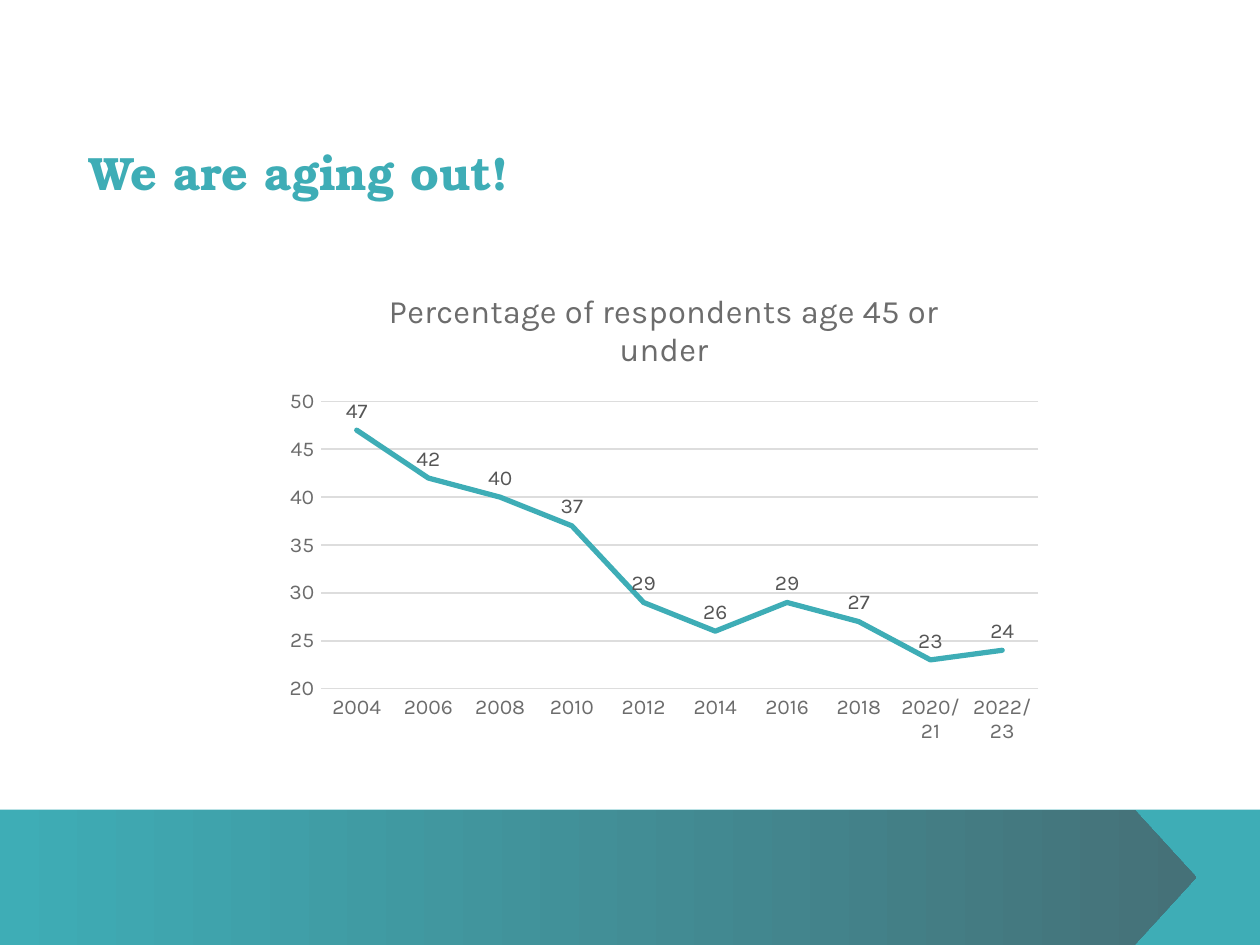
from dataclasses import dataclass

from lxml.etree import SubElement
from pptx import Presentation
from pptx.chart.data import CategoryChartData
from pptx.dml.color import RGBColor
from pptx.enum.chart import XL_CHART_TYPE, XL_LABEL_POSITION, XL_MARKER_STYLE, XL_TICK_MARK
from pptx.enum.shapes import MSO_SHAPE
from pptx.enum.text import MSO_ANCHOR
from pptx.oxml.ns import qn
from pptx.util import Inches, Pt


@dataclass(frozen=True)
class Theme:
    teal: RGBColor = RGBColor.from_string("3EADB6")
    slate: RGBColor = RGBColor.from_string("457178")
    grid: RGBColor = RGBColor.from_string("DDDDDD")
    axis: RGBColor = RGBColor.from_string("6C6C6C")
    label: RGBColor = RGBColor.from_string("565656")
    ink: RGBColor = RGBColor.from_string("1D1D1D")
    head: str = "TeX Gyre Bonum"
    body: str = "Karla"
    big: int = 20
    mid: int = 14
    base: int = 10
    small: int = 9


theme = Theme()


def style(font, name, size, color, bold=False):
    font.name, font.size, font.bold = name, Pt(size), bold
    font.color.rgb = color


def place(parent, before, **spots):
    """Fix a chart part at fractions of the chart area."""
    for old in parent.findall(qn("c:layout")):
        parent.remove(old)
    layout = SubElement(parent, qn("c:layout"))
    manual = SubElement(layout, qn("c:manualLayout"))
    for tag, val in spots.items():
        SubElement(manual, qn("c:" + tag)).set("val", str(val))
    parent.find(qn(before)).addprevious(layout)


prs = Presentation()
prs.slide_width = Inches(7.5)
prs.slide_height = prs.slide_width * 3 // 4
slide = prs.slides.add_slide(prs.slide_layouts[6])
shapes = slide.shapes

# Footer band
top = Inches(4.82)
high = prs.slide_height - top
band = shapes.add_shape(MSO_SHAPE.RECTANGLE, 0, top, prs.slide_width, high)
band.fill.solid()
band.fill.fore_color.rgb = theme.teal
arrow = shapes.add_shape(MSO_SHAPE.PENTAGON, 0, top, Inches(7.12), high)
arrow.adjustments[0] = 0.457
arrow.fill.gradient()
arrow.fill.gradient_angle = 0
for stop, color, pos in zip(arrow.fill.gradient_stops, (theme.teal, theme.slate), (0, 1)):
    stop.color.rgb, stop.position = color, pos
for shape in (band, arrow):
    shape.shadow.inherit = False
    shape.line.fill.background()

# Heading
box = shapes.add_textbox(Inches(0.53), Inches(0.31), Inches(6.39), Inches(0.88))
frame = box.text_frame
frame.word_wrap = True
frame.vertical_anchor = MSO_ANCHOR.BOTTOM
frame.margin_left = frame.margin_right = frame.margin_top = frame.margin_bottom = 0
run = frame.paragraphs[0].add_run()
run.text = "We are aging out!"
style(run.font, theme.head, theme.big, theme.teal, True)

# Line chart
data = CategoryChartData()
data.categories = ["2004", "2006", "2008", "2010", "2012",
                   "2014", "2016", "2018", "2020/21", "2022/23"]
data.add_series("Series 1", (47, 42, 40, 37, 29, 26, 29, 27, 23, 24))
wide, tall = 4.64, 2.9
chart = shapes.add_chart(XL_CHART_TYPE.LINE, Inches(1.63), Inches(1.59),
                         Inches(wide), Inches(tall), data).chart
style(chart.font, theme.body, theme.base, theme.ink)
chart.has_legend = False
chart.has_title = True
title = chart.chart_title.text_frame.paragraphs[0].add_run()
title.text = "Percentage of respondents age 45 or under"
style(title.font, theme.body, theme.mid, theme.axis)

years, share = chart.category_axis, chart.value_axis
for axis in (years, share):
    axis.major_tick_mark = axis.minor_tick_mark = XL_TICK_MARK.NONE
    style(axis.tick_labels.font, theme.body, theme.small, theme.axis)
share.minimum_scale, share.maximum_scale, share.major_unit = 20, 50, 5
share.has_major_gridlines = True
share.format.line.fill.background()
for line in (years.format.line, share.major_gridlines.format.line):
    line.color.rgb, line.width = theme.grid, Pt(0.75)

plot = chart.plots[0]
plot.vary_by_categories = False
series = plot.series[0]
series.smooth = False
series.marker.style = XL_MARKER_STYLE.NONE
series.format.line.color.rgb = theme.teal
series.format.line.width = Pt(2.25)
series.format.line._get_or_add_ln().set("cap", "rnd")
labels = series.data_labels
labels.show_value = True
labels.position = XL_LABEL_POSITION.ABOVE
style(labels.font, theme.body, theme.small, theme.label)

root = chart.element.find(qn("c:chart"))
place(root.find(qn("c:title")), "c:overlay", xMode="edge", yMode="edge",
      x=0.65 / wide, y=0.1 / tall)
place(root.find(qn("c:plotArea")), "c:lineChart", layoutTarget="inner",
      xMode="edge", yMode="edge", x=0.28 / wide, y=0.8 / tall,
      w=4.27 / wide, h=1.71 / tall)

prs.save("out.pptx")
